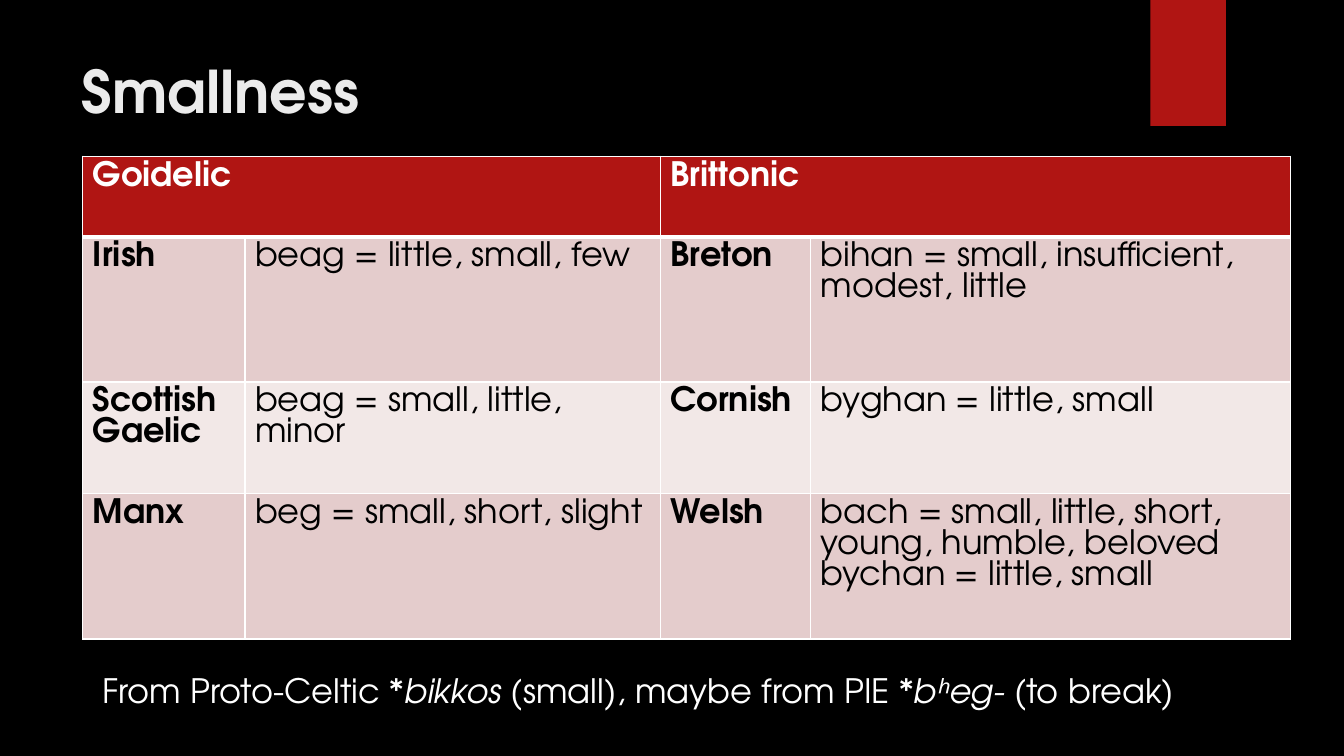
"""Build the Smallness slide comparing Goidelic and Brittonic words."""
from lxml import etree
from pptx import Presentation
from pptx import util as u
from pptx.dml.color import RGBColor
from pptx.enum import shapes, text
from pptx.oxml.ns import qn

COLORS = {"black": "000000", "white": "FFFFFF", "title": "EBEBEB",
          "red": "B01513", "dark band": "E4CCCC", "light band": "F2E8E7"}
FONT = "TeX Gyre Adventor"


def add_run(paragraph, words, color, size=24, **formats):
    run = paragraph.add_run()
    run.text = words
    run.font.color.rgb = RGBColor.from_string(COLORS[color])
    for name, value in {"name": FONT, "size": u.Pt(size), **formats}.items():
        setattr(run.font, name, value)


def set_borders(cell, bottom_width):
    properties = cell._tc.get_or_add_tcPr()
    widths = {"a:lnL": 1, "a:lnR": 1, "a:lnT": 1, "a:lnB": bottom_width}
    for position, (tag, width) in enumerate(widths.items()):
        line = etree.Element(qn(tag), w=str(u.Pt(width)))
        fill = etree.SubElement(line, qn("a:solidFill"))
        etree.SubElement(fill, qn("a:srgbClr"), val=COLORS["white"])
        properties.insert(position, line)


presentation = Presentation()
presentation.slide_width = u.Inches(13.33)
presentation.slide_height = u.Inches(7.5)
slide = presentation.slides.add_slide(presentation.slide_layouts[6])
slide.background.fill.solid()
slide.background.fill.fore_color.rgb = RGBColor.from_string(COLORS["black"])

ribbon = slide.shapes.add_shape(shapes.MSO_SHAPE.RECTANGLE, u.Inches(11.41), 0,
                                u.Inches(0.75), u.Inches(1.25))
ribbon.shadow.inherit = False
ribbon.fill.solid()
ribbon.fill.fore_color.rgb = RGBColor.from_string(COLORS["red"])
ribbon.line.fill.background()

title = slide.shapes.add_textbox(u.Inches(0.71), u.Inches(0.5), u.Inches(10.29), u.Inches(0.78))
title.text_frame.word_wrap = True
title.text_frame.vertical_anchor = text.MSO_ANCHOR.MIDDLE
add_run(title.text_frame.paragraphs[0], "Smallness", "title", 42, bold=True)

rows = [
    ["Goidelic", "", "Brittonic", ""],
    ["Irish", "beag = little, small, few",
     "Breton", "bihan = small, insufficient, modest, little"],
    ["Scottish Gaelic", "beag = small, little, minor",
     "Cornish", "byghan = little, small"],
    ["Manx", "beg = small, short, slight",
     "Welsh", "bach = small, little, short, young, humble, beloved\nbychan = little, small"],
]
column_widths = [1.61, 4.12, 1.49, 4.76]
row_heights = [0.8, 1.44, 1.11, 1.44]
row_fills = ["red", "dark band", "light band", "dark band"]

table = slide.shapes.add_table(4, 4, u.Inches(0.82), u.Inches(1.55),
                               u.Inches(11.98), u.Inches(4.8)).table
for column, width in zip(table.columns, column_widths):
    column.width = u.Inches(width)
for row, height in zip(table.rows, row_heights):
    row.height = u.Inches(height)
for first in (0, 2):
    table.cell(0, first).merge(table.cell(0, first + 1))

for row_index, (words, fill) in enumerate(zip(rows, row_fills)):
    header = row_index == 0
    for column_index, entry in enumerate(words):
        cell = table.cell(row_index, column_index)
        cell.fill.solid()
        cell.fill.fore_color.rgb = RGBColor.from_string(COLORS[fill])
        set_borders(cell, 3 if header else 1)
        if cell.is_spanned:
            continue
        for line_index, line in enumerate(entry.split("\n")):
            frame = cell.text_frame
            paragraph = frame.add_paragraph() if line_index else frame.paragraphs[0]
            paragraph.line_spacing = u.Pt(22.2)
            add_run(paragraph, line, "white" if header else "black",
                    bold=column_index % 2 == 0)

etymology = slide.shapes.add_textbox(u.Inches(0.92), u.Inches(6.6), u.Inches(11.08), u.Inches(0.5))
etymology.text_frame.word_wrap = True
for words, italic in [("From Proto-Celtic ", False), ("*bikkos ", True),
                      ("(small), maybe from PIE ", False), ("*bʰeg- ", True),
                      ("(to break)", False)]:
    add_run(etymology.text_frame.paragraphs[0], words, "white", italic=italic)

presentation.save("out.pptx")
